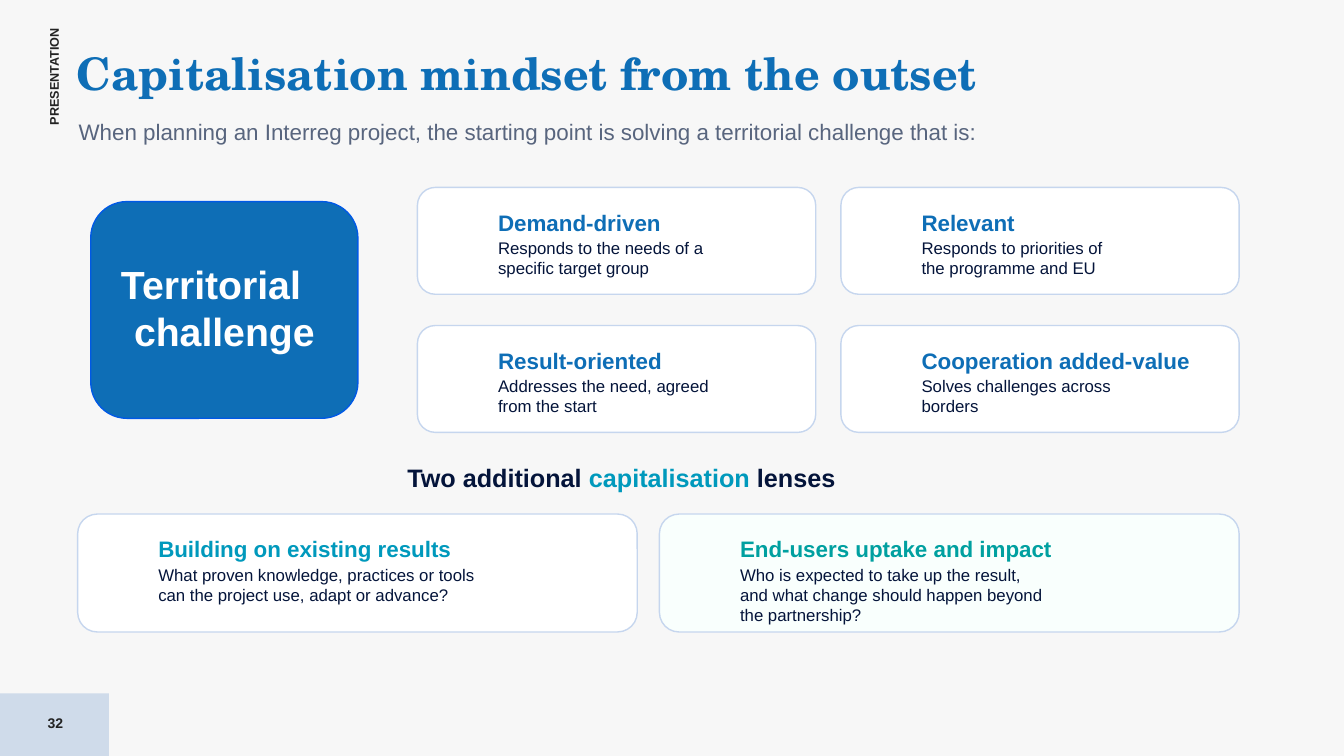
"""Builds the slide on a capitalisation mindset and its project lenses."""
import pptx
import pptx.dml.color
import pptx.enum.shapes
import pptx.enum.text
import pptx.util

Inches = pptx.util.Inches
Pt = pptx.util.Pt
ALIGN = pptx.enum.text.PP_ALIGN
ANCHOR = pptx.enum.text.MSO_ANCHOR
SHAPE = pptx.enum.shapes.MSO_SHAPE

BLUE, CYAN, TEAL = "0E6EB6", "0099BC", "00A0A0"
NAVY, GREY, BLACK, WHITE = "04143A", "58657E", "222222", "FFFFFF"


def paint(color_format, value):
    color_format.rgb = pptx.dml.color.RGBColor.from_string(value)


def write(frame, text, size=12, color=NAVY, bold=False, font="Arial", aligns=(ALIGN.LEFT,),
          inset=0.02, anchor=ANCHOR.TOP, wrap=True, grow=True, accent=None, accent_color=CYAN):
    frame.word_wrap = wrap
    frame.vertical_anchor = anchor
    fit = pptx.enum.text.MSO_AUTO_SIZE
    frame.auto_size = fit.SHAPE_TO_FIT_TEXT if grow else fit.NONE
    frame.margin_left = frame.margin_right = Inches(inset)
    frame.margin_top = frame.margin_bottom = Inches(inset)
    for index, line in enumerate(text.split("\n")):
        paragraph = frame.add_paragraph() if index else frame.paragraphs[0]
        paragraph.alignment = aligns[min(index, len(aligns) - 1)]
        for part in line.partition(accent) if accent else (line,):
            run = paragraph.add_run()
            run.text = part
            run.font.size = Pt(size)
            run.font.bold = bold
            run.font.name = font
            paint(run.font.color, accent_color if part == accent else color)


class Deck:
    def __init__(self):
        self.presentation = pptx.Presentation()
        self.presentation.slide_width = Inches(13.33)
        self.presentation.slide_height = Inches(7.5)
        self.slide = self.presentation.slides.add_slide(self.presentation.slide_layouts[5])
        background = self.slide.background.fill
        background.solid()
        paint(background.fore_color, "F7F7F7")

    def title(self, text, left, top, width, height, **style):
        heading = self.slide.shapes.title
        heading.left, heading.top = Inches(left), Inches(top)
        heading.width, heading.height = Inches(width), Inches(height)
        write(heading.text_frame, text, **style)

    def text(self, text, left, top, width, height, rotation=0, **style):
        label = self.slide.shapes.add_textbox(
            Inches(left), Inches(top), Inches(width), Inches(height))
        label.rotation = rotation
        write(label.text_frame, text, **style)

    def panel(self, left, top, width, height, fill, line=None, kind=SHAPE.ROUNDED_RECTANGLE):
        panel = self.slide.shapes.add_shape(
            kind, Inches(left), Inches(top), Inches(width), Inches(height))
        panel.shadow.inherit = False
        panel.fill.solid()
        paint(panel.fill.fore_color, fill)
        if line:
            paint(panel.line.color, line)
            panel.line.width = Pt(1)
        else:
            panel.line.fill.background()

    def card(self, heading, body, left, top, width, height, color=BLUE, fill=WHITE):
        self.panel(left, top, width, height, fill, "C6D6EE")
        self.text(heading, left + 0.78, top + 0.19, width - 0.88, 0.31,
                  size=16, color=color, bold=True)
        body_height = 0.03 + 0.205 * len(body.split("\n"))
        self.text(body, left + 0.78, top + 0.48, width - 0.88, body_height)


def main():
    deck = Deck()
    deck.panel(0, 6.88, 1.08, 0.62, "CFDBEA", kind=SHAPE.RECTANGLE)
    deck.text("PRESENTATION", 0.04, 0.67, 0.99, 0.15, rotation=270,
              size=9, color=BLACK, bold=True, inset=0, wrap=False)
    deck.text("32", 0, 6.97, 1.1, 0.4, size=10, color=BLACK, bold=True,
              aligns=(ALIGN.CENTER,), inset=0, anchor=ANCHOR.MIDDLE, grow=False)
    deck.title("Capitalisation mindset from the outset", 0.76, 0.45, 11.7, 0.45,
               size=32, color=BLUE, bold=True, font="TeX Gyre Schola", inset=0)
    deck.text("When planning an Interreg project, the starting point is solving "
              "a territorial challenge that is:", 0.76, 1.15, 11.3, 0.31, size=16, color=GREY)

    deck.panel(0.9, 2, 2.65, 2.15, BLUE, "0059E6")
    deck.text("Territorial\nchallenge", 1.2, 2.58, 2.05, 0.94, size=28, color=WHITE,
              bold=True, aligns=(ALIGN.LEFT, ALIGN.CENTER), inset=0)

    qualities = [
        ("Demand-driven", "Responds to the needs of a\nspecific target group"),
        ("Relevant", "Responds to priorities of\nthe programme and EU"),
        ("Result-oriented", "Addresses the need, agreed\nfrom the start"),
        ("Cooperation added-value", "Solves challenges across\nborders"),
    ]
    for index, (heading, body) in enumerate(qualities):
        row, column = divmod(index, 2)
        deck.card(heading, body, 4.14 + 4.2 * column, 1.86 + 1.37 * row, 3.95, 1.06)

    deck.text("Two additional capitalisation lenses", 4.02, 4.57, 4.88, 0.34,
              size=18, bold=True, accent="capitalisation")
    lenses = [
        ("Building on existing results",
         "What proven knowledge, practices or tools\ncan the project use, adapt or advance?",
         0.77, 5.55, CYAN, WHITE),
        ("End-users uptake and impact",
         "Who is expected to take up the result,\nand what change should happen beyond\n"
         "the partnership?", 6.54, 5.75, TEAL, "F9FFFD"),
    ]
    for heading, body, left, width, color, fill in lenses:
        deck.card(heading, body, left, 5.1, width, 1.17, color, fill)

    deck.presentation.save("out.pptx")


if __name__ == "__main__":
    main()
